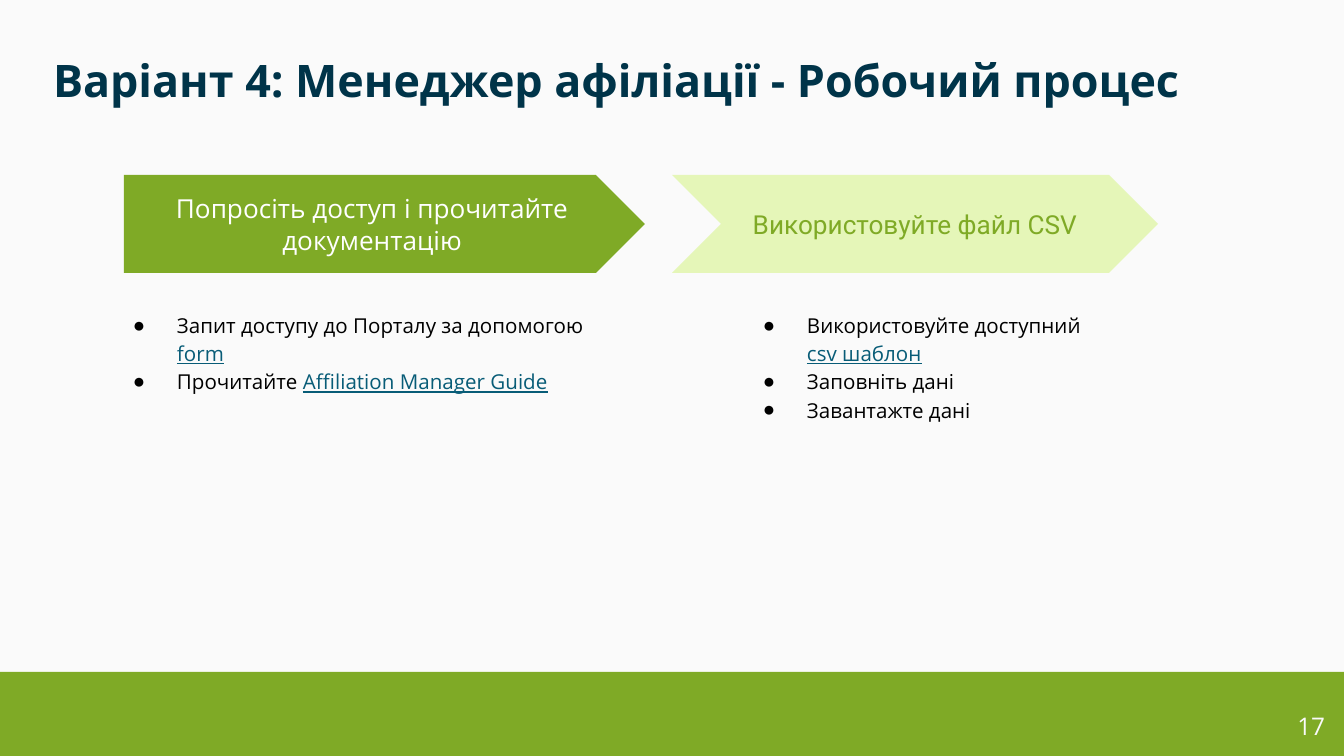
import dataclasses

import lxml.etree
import pptx
import pptx.dml.color
import pptx.enum.shapes
import pptx.enum.text
import pptx.oxml.ns
import pptx.util


@dataclasses.dataclass(frozen=True)
class Theme:
    background: str = "FAFAFA"
    green: str = "7FAA26"
    pale_green: str = "E5F6B8"
    navy: str = "003449"
    link: str = "085C77"
    black: str = "000000"
    white: str = "FFFFFF"
    font: str = "Open Sans"
    step_font: str = "Roboto"
    title_size: int = 24
    step_size: int = 14
    number_size: int = 13
    list_size: int = 11


theme = Theme()
PX = 914400 / 134.4
rgb = pptx.dml.color.RGBColor.from_string
align = pptx.enum.text.PP_ALIGN
shapes = pptx.enum.shapes.MSO_SHAPE


def place(box, left, top, width, height):
    box.left, box.top, box.width, box.height = (
        round(value * PX) for value in (left, top, width, height)
    )
    frame = box.text_frame
    frame.word_wrap = True
    frame.auto_size = pptx.enum.text.MSO_AUTO_SIZE.NONE
    frame.vertical_anchor = pptx.enum.text.MSO_ANCHOR.TOP
    frame.margin_left = frame.margin_right = round(13 * PX)
    frame.margin_top = frame.margin_bottom = round(13 * PX)
    return frame


def add_span(para, text, size, color, font=theme.font):
    span = para.add_run()
    span.text = text
    span.font.name = font
    span.font.size = pptx.util.Pt(size)
    span.font.color.rgb = rgb(color)
    return span


deck = pptx.Presentation()
deck.slide_width, deck.slide_height = round(1344 * PX), round(756 * PX)
page = deck.slides.add_slide(deck.slide_layouts.get_by_name("Two Content"))
page.background.fill.solid()
page.background.fill.fore_color.rgb = rgb(theme.background)

title = place(page.shapes.title, 40, 40, 1280, 75).paragraphs[0]
title.alignment = align.LEFT
add_span(
    title,
    "Варіант 4: Менеджер афіліації - Робочий процес",
    theme.title_size,
    theme.navy,
).font.bold = True

blocks = [
    (shapes.RECTANGLE, (0, 672, 1344, 84), theme.green, "", theme.white, theme.font),
    (
        shapes.PENTAGON,
        (124, 175, 521, 98),
        theme.green,
        "Попросіть доступ і прочитайте документацію",
        theme.white,
        theme.font,
    ),
    (
        shapes.CHEVRON,
        (672, 175, 486, 98),
        theme.pale_green,
        "Використовуйте файл CSV",
        theme.green,
        theme.step_font,
    ),
]
for kind, bounds, fill, label, color, font in blocks:
    block = page.shapes.add_shape(kind, 0, 0, 0, 0)
    block.shadow.inherit = False
    block.fill.solid()
    block.fill.fore_color.rgb = rgb(fill)
    block.line.fill.background()
    frame = place(block, *bounds)
    if label:
        frame.vertical_anchor = pptx.enum.text.MSO_ANCHOR.MIDDLE
        frame.paragraphs[0].alignment = align.CENTER
        add_span(frame.paragraphs[0], label, theme.step_size, color, font)

lists = [
    (
        (97, 296, 521, 384),
        [
            ("Запит доступу до Порталу за допомогою ", "form"),
            ("Прочитайте ", "Affiliation Manager Guide"),
        ],
    ),
    (
        (727, 296, 376, 384),
        [
            ("Використовуйте доступний ", "csv шаблон"),
            ("Заповніть дані", ""),
            ("Завантажте дані", ""),
        ],
    ),
]
for index, (bounds, items) in enumerate(lists, start=1):
    frame = place(page.placeholders[index], *bounds)
    for number, (text, link) in enumerate(items):
        para = frame.add_paragraph() if number else frame.paragraphs[0]
        para.line_spacing = 1.15
        para.space_before = pptx.util.Pt(0)
        properties = para._p.get_or_add_pPr()
        properties.set("marL", str(round(67 * PX)))
        properties.set("indent", str(round(-44 * PX)))
        bullet_color = lxml.etree.SubElement(properties, pptx.oxml.ns.qn("a:buClr"))
        lxml.etree.SubElement(
            bullet_color, pptx.oxml.ns.qn("a:srgbClr"), val=theme.black
        )
        lxml.etree.SubElement(properties, pptx.oxml.ns.qn("a:buChar"), char="●")
        add_span(para, text, theme.list_size, theme.black)
        if link:
            add_span(para, link, theme.list_size, theme.link).font.underline = True

number_box = page.shapes.add_textbox(0, 0, 0, 0)
page_number = place(number_box, 1258, 698, 80, 58).paragraphs[0]
page_number.alignment = align.RIGHT
add_span(page_number, "17", theme.number_size, theme.background)

deck.save("out.pptx")
